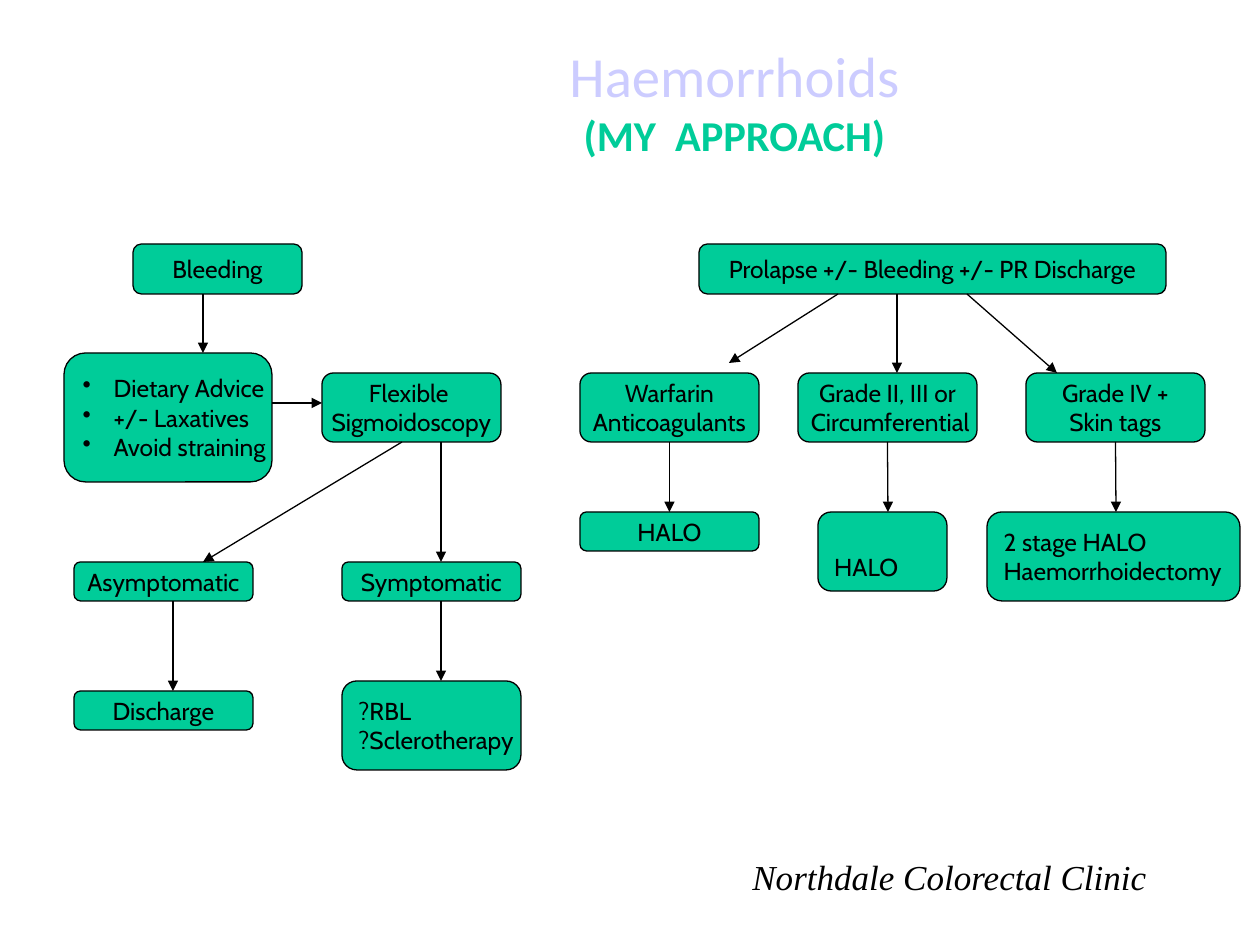
from lxml import etree
from pptx import Presentation
from pptx.dml.color import RGBColor
from pptx.enum.shapes import MSO_CONNECTOR, MSO_SHAPE
from pptx.enum.text import MSO_ANCHOR, PP_ALIGN
from pptx.oxml.ns import qn
from pptx.util import Pt

PX = 914400 / 126
BLACK = RGBColor(0x00, 0x00, 0x00)
GREEN = RGBColor(0x00, 0xCC, 0x99)
LILAC = RGBColor(0xCC, 0xCC, 0xFF)
ROUNDED = MSO_SHAPE.FLOWCHART_ALTERNATE_PROCESS
STRAIGHT = MSO_CONNECTOR.STRAIGHT
MIDDLE = MSO_ANCHOR.MIDDLE
LEFT, CENTER = PP_ALIGN.LEFT, PP_ALIGN.CENTER
TOP_SIDE, BOTTOM_SIDE = 0, 2


def emu(*lengths):
    return [round(length * PX) for length in lengths]


def style(run, font, size, color):
    run.font.name = font
    run.font.size = Pt(size)
    run.font.color.rgb = color


prs = Presentation()
prs.slide_width, prs.slide_height = emu(1260, 945)
slide = prs.slides.add_slide(prs.slide_layouts[6])

# Clinic name and title
clinic = slide.shapes.add_textbox(*emu(740, 849, 535, 55)).text_frame
clinic.word_wrap = True
clinic.text = "Northdale Colorectal Clinic"
clinic_run = clinic.paragraphs[0].runs[0]
style(clinic_run, "Times New Roman", 20, BLACK)
clinic_run.font.italic = True

title = slide.shapes.add_textbox(*emu(422, 45, 625, 110)).text_frame
title.word_wrap = True
title.vertical_anchor = MIDDLE
title.text = "Haemorrhoids\v(MY  APPROACH)"
title.paragraphs[0].alignment = CENTER
topic, subtitle = title.paragraphs[0].runs
style(topic, "Calibri", 32.4, LILAC)
style(subtitle, "Calibri", 24.3, GREEN)
subtitle.font.bold = True

# Steps: key, left, top, width, height, alignment, text
STEPS = [
    ("bleeding", 133, 244, 169, 50, CENTER, "Bleeding"),
    ("prolapse", 699, 244, 467, 50, CENTER, "Prolapse +/- Bleeding +/- PR Discharge"),
    ("advice", 64, 353, 208, 129, LEFT, "Dietary Advice\n+/- Laxatives\nAvoid straining"),
    ("flexible", 322, 373, 179, 69, CENTER, "Flexible \nSigmoidoscopy"),
    ("asymptomatic", 74, 562, 179, 39, CENTER, "Asymptomatic"),
    ("symptomatic", 342, 562, 179, 39, CENTER, "Symptomatic"),
    ("discharge", 74, 691, 179, 39, CENTER, "Discharge"),
    ("rbl", 342, 681, 179, 89, LEFT, "?RBL\n?Sclerotherapy"),
    ("warfarin", 580, 373, 179, 69, CENTER, "Warfarin\nAnticoagulants"),
    ("grade 2-3", 798, 373, 179, 69, CENTER, "Grade II, III or\n Circumferential"),
    ("warfarin halo", 580, 512, 179, 39, CENTER, "HALO"),
    ("grade 4", 1026, 373, 179, 69, CENTER, "Grade IV +\nSkin tags"),
    ("grade 2-3 halo", 818, 512, 129, 79, LEFT, "HALO"),
    ("two stage", 987, 512, 253, 89, LEFT, "2 stage HALO\nHaemorrhoidectomy"),
]
steps = {}
for key, left, top, width, height, alignment, text in STEPS:
    step = slide.shapes.add_shape(ROUNDED, *emu(left, top, width, height))
    step.shadow.inherit = False
    step.fill.solid()
    step.fill.fore_color.rgb = GREEN
    step.line.color.rgb = BLACK
    step.line.width = Pt(0.75)
    frame = step.text_frame
    frame.word_wrap = False
    frame.vertical_anchor = MIDDLE
    frame.text = text
    for paragraph in frame.paragraphs:
        paragraph.alignment = alignment
        style(paragraph.runs[0], "Cabin", 14, BLACK)
    steps[key] = step

steps["grade 2-3 halo"].text_frame.margin_top = emu(36)[0]
indent = emu(31)[0]
for paragraph in steps["advice"].text_frame.paragraphs:
    properties = paragraph._p.get_or_add_pPr()
    properties.set("marL", str(indent))
    properties.set("indent", str(-indent))
    etree.SubElement(properties, qn("a:buChar")).set("char", "•")

# Arrows: start x, start y, end x, end y, step joined at start, step joined at end
ARROWS = [
    (203, 294, 203, 353, None, None),
    (272, 403, 322, 403, None, None),
    (441, 442, 441, 562, None, None),
    (402, 442, 203, 562, None, None),
    (441, 601, 441, 681, None, None),
    (173, 601, 173, 691, None, None),
    (897, 294, 897, 373, None, None),
    (838, 294, 729, 363, None, None),
    (967, 294, 1057, 373, None, None),
    (669, 442, 669, 512, "warfarin", "warfarin halo"),
    (888, 442, 888, 512, "grade 2-3", None),
    (1116, 442, 1116, 512, "grade 4", None),
]
for x1, y1, x2, y2, source, target in ARROWS:
    arrow = slide.shapes.add_connector(STRAIGHT, *emu(x1, y1, x2, y2))
    if source:
        arrow.begin_connect(steps[source], BOTTOM_SIDE)
    if target:
        arrow.end_connect(steps[target], TOP_SIDE)
    arrow.line.color.rgb = BLACK
    arrow.line.width = Pt(0.75)
    etree.SubElement(arrow.line._get_or_add_ln(), qn("a:tailEnd")).set("type", "triangle")
    etree.SubElement(arrow._element.spPr, qn("a:effectLst"))

prs.save("out.pptx")
